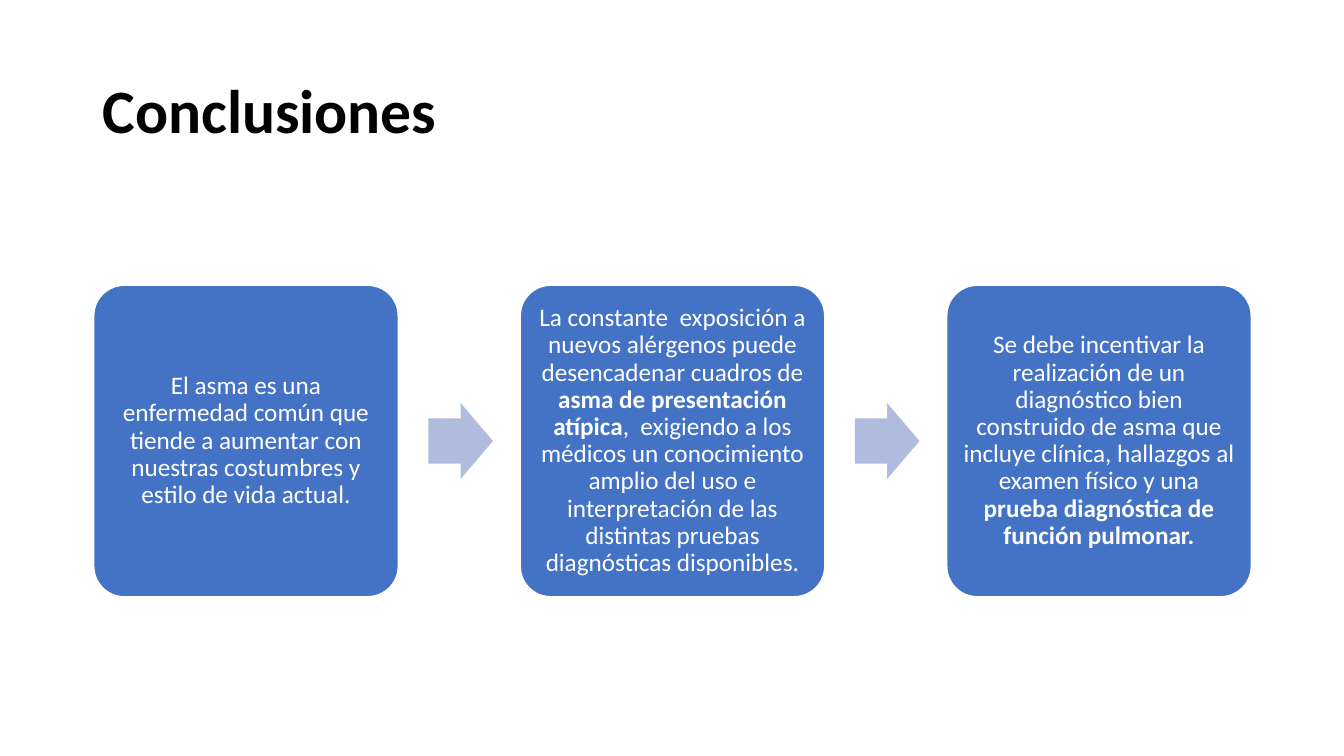
from dataclasses import dataclass

from pptx import Presentation
from pptx.dml.color import RGBColor
from pptx.enum.shapes import MSO_SHAPE
from pptx.enum.text import MSO_ANCHOR, PP_ALIGN
from pptx.util import Inches, Pt


@dataclass(frozen=True)
class Theme:
    """Colours, font and type sizes of the slide."""

    font: str = "Calibri"
    ink: RGBColor = RGBColor(0x00, 0x00, 0x00)
    paper: RGBColor = RGBColor(0xFF, 0xFF, 0xFF)
    card: RGBColor = RGBColor(0x44, 0x72, 0xC4)
    arrow: RGBColor = RGBColor(0xB0, 0xBC, 0xDE)
    title_size: Pt = Pt(44)
    body_size: Pt = Pt(18)


class ConclusionSlide:
    """Draws the elements of one slide in a theme."""

    def __init__(self, slide, theme):
        self.shapes = slide.shapes
        self.theme = theme

    def style(self, run, size, color, bold):
        """Format one run."""
        run.font.name = self.theme.font
        run.font.size = size
        run.font.color.rgb = color
        run.font.bold = bold

    def title(self, wording, left, top, width, height):
        """Add the slide heading."""
        heading = self.shapes.add_textbox(
            Inches(left), Inches(top), Inches(width), Inches(height)
        ).text_frame
        heading.word_wrap = True
        heading.vertical_anchor = MSO_ANCHOR.MIDDLE
        heading.text = wording
        line = heading.paragraphs[0]
        line.line_spacing = 0.9
        self.style(line.runs[0], self.theme.title_size, self.theme.ink, True)

    def block(self, kind, left, top, width, height, fill, adjustments):
        """Add a filled preset shape without outline or shadow."""
        block = self.shapes.add_shape(
            kind, Inches(left), Inches(top), Inches(width), Inches(height)
        )
        for index, value in enumerate(adjustments):
            block.adjustments[index] = value
        block.shadow.inherit = False
        block.fill.solid()
        block.fill.fore_color.rgb = fill
        block.line.fill.background()
        return block

    def card(self, phrases, left, top, width, height):
        """Add a rounded card holding (wording, bold) phrases."""
        card = self.block(MSO_SHAPE.ROUNDED_RECTANGLE, left, top, width, height,
                          self.theme.card, [0.1])
        card.line.color.rgb = self.theme.paper
        card.line.width = Pt(1)
        body = card.text_frame
        body.word_wrap = True
        body.vertical_anchor = MSO_ANCHOR.MIDDLE
        body.margin_left = body.margin_right = Inches(0.07)
        body.margin_top = body.margin_bottom = Inches(0.07)
        statement = body.paragraphs[0]
        statement.alignment = PP_ALIGN.CENTER
        statement.line_spacing = 0.9
        for wording, bold in phrases:
            phrase = statement.add_run()
            phrase.text = wording
            self.style(phrase, self.theme.body_size, self.theme.paper, bold)

    def arrow(self, left, top, width, height):
        """Add an arrow leading to the next card."""
        self.block(MSO_SHAPE.RIGHT_ARROW, left, top, width, height,
                   self.theme.arrow, [0.6, 0.5])


CONCLUSIONS = [
    [("El asma es una enfermedad común que tiende a aumentar con nuestras "
      "costumbres y estilo de vida actual.", False)],
    [("La constante  exposición a nuevos alérgenos puede desencadenar "
      "cuadros de ", False),
     ("asma de presentación atípica", True),
     (",  exigiendo a los médicos un conocimiento amplio del uso e "
      "interpretación de las distintas pruebas diagnósticas disponibles.", False)],
    [("Se debe incentivar la realización de un diagnóstico bien construido de "
      "asma que incluye clínica, hallazgos al examen físico y una ", False),
     ("prueba diagnóstica de función pulmonar.", True)],
]


def main():
    """Build and save the slide."""
    deck = Presentation()
    deck.slide_width, deck.slide_height = Inches(13.33), Inches(7.5)
    page = ConclusionSlide(deck.slides.add_slide(deck.slide_layouts[6]), Theme())
    page.title("Conclusiones", 0.92, 0.4, 11.5, 1.45)
    first_left, step = 0.93, 4.23
    for position, phrases in enumerate(CONCLUSIONS):
        left = first_left + position * step
        if position:
            page.arrow(left - 0.91, 4, 0.64, 0.75)
        page.card(phrases, left, 2.83, 3.02, 3.09)
    deck.save("out.pptx")


if __name__ == "__main__":
    main()
